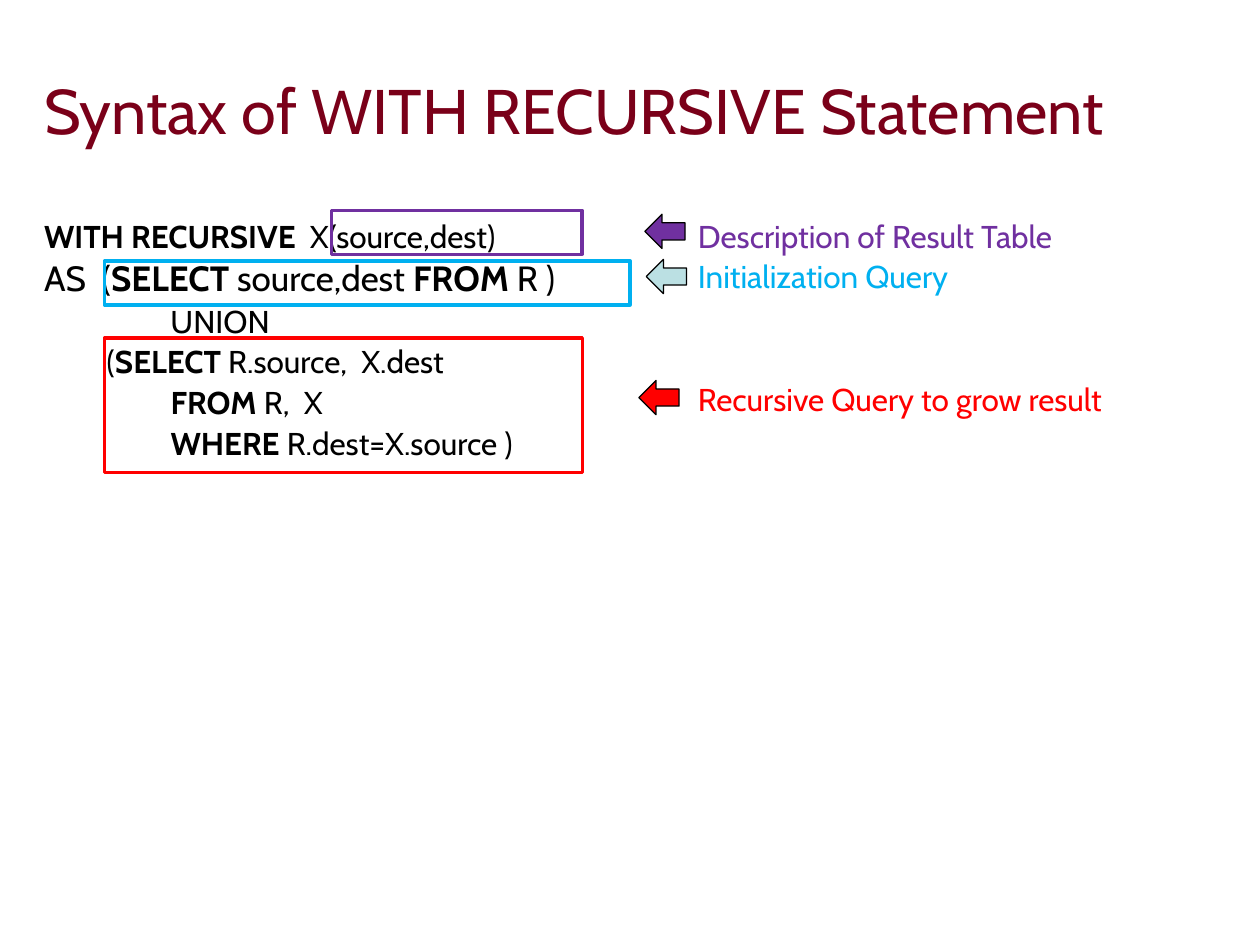
"""Build a slide that explains the parts of a WITH RECURSIVE statement."""
from dataclasses import dataclass

import pptx
import pptx.dml.color
import pptx.enum.shapes
import pptx.enum.text
import pptx.util

Cm = pptx.util.Cm
Pt = pptx.util.Pt
RGBColor = pptx.dml.color.RGBColor
MSO_SHAPE = pptx.enum.shapes.MSO_SHAPE
MSO_ANCHOR = pptx.enum.text.MSO_ANCHOR

FONT = "Cabin"
MAROON = RGBColor(0x7A, 0x00, 0x19)
BLACK = RGBColor(0x00, 0x00, 0x00)
PURPLE = RGBColor(0x70, 0x30, 0xA0)
BLUE = RGBColor(0x00, 0xB0, 0xF0)
PALE_BLUE = RGBColor(0xBB, 0xE0, 0xE3)
RED = RGBColor(0xFF, 0x00, 0x00)


@dataclass(frozen=True)
class Box:
    left: float
    top: float
    width: float
    height: float


@dataclass(frozen=True)
class Run:
    text: str
    bold: bool = False


@dataclass(frozen=True)
class Line:
    runs: tuple[Run, ...]
    size: float = 18
    color: RGBColor = BLACK
    indent: float = 0
    before: float = 6
    spacing: float = 0.8


@dataclass(frozen=True)
class Part:
    frame: Box
    color: RGBColor
    arrow_left: float
    arrow_top: float
    arrow_fill: RGBColor


INDENT = 1.12
ARROW_WIDTH, ARROW_HEIGHT = 0.81, 0.69

TITLE = [Line((Run("Syntax of WITH RECURSIVE Statement"),), 36, MAROON, before=0, spacing=1)]
CODE = [
    Line((Run("WITH RECURSIVE", True), Run("  X(source,dest)")), before=0),
    Line((Run("AS  ("), Run("SELECT ", True), Run("source,dest "), Run("FROM", True),
          Run(" R )")), size=20),
    Line((Run("          UNION"),), indent=INDENT),
    Line((Run(" ("), Run("SELECT ", True), Run("R.source,  X.dest")), indent=INDENT),
    Line((Run("          "), Run("FROM", True), Run(" R,  X")), indent=INDENT),
    Line((Run("          "), Run("WHERE ", True), Run("R.dest=X.source )")), indent=INDENT),
]
NOTES = [
    Line((Run("Description of Result Table"),), color=PURPLE, indent=INDENT, before=0),
    Line((Run("Initialization Query"),), color=BLUE, indent=INDENT),
    Line((Run("Recursive Query to grow result"),), color=RED, indent=INDENT, before=53),
]
PARTS = [
    Part(Box(2.11, 6.81, 9.63, 2.72), RED, 12.88, 7.67, RED),
    Part(Box(2.11, 5.26, 10.59, 0.89), BLUE, 13.03, 5.23, PALE_BLUE),
    Part(Box(6.68, 4.24, 5.05, 0.89), PURPLE, 13, 4.32, PURPLE),
]


def lengths(box: Box) -> tuple[int, ...]:
    return Cm(box.left), Cm(box.top), Cm(box.width), Cm(box.height)


def add_text(s, box: Box, lines: list[Line], anchor=MSO_ANCHOR.TOP) -> None:
    tf = s.shapes.add_textbox(*lengths(box)).text_frame
    tf.word_wrap = True
    tf.vertical_anchor = anchor
    for i, line in enumerate(lines):
        p = tf.add_paragraph() if i else tf.paragraphs[0]
        p.line_spacing = line.spacing
        p.space_before = Pt(line.before)
        p._p.get_or_add_pPr().set("marL", str(Cm(line.indent)))
        for run in line.runs:
            r = p.add_run()
            r.text = run.text
            r.font.name = FONT
            r.font.size = Pt(line.size)
            r.font.bold = run.bold
            r.font.color.rgb = line.color


def add_outlined(s, kind, box: Box, color: RGBColor, weight: float,
                 fill: RGBColor | None = None) -> None:
    sp = s.shapes.add_shape(kind, *lengths(box))
    sp.shadow.inherit = False
    sp.line.color.rgb = color
    sp.line.width = Pt(weight)
    if fill is None:
        sp.fill.background()
    else:
        sp.fill.solid()
        sp.fill.fore_color.rgb = fill


def add_part(s, part: Part) -> None:
    add_outlined(s, MSO_SHAPE.RECTANGLE, part.frame, part.color, 2)
    arrow = Box(part.arrow_left, part.arrow_top, ARROW_WIDTH, ARROW_HEIGHT)
    add_outlined(s, MSO_SHAPE.LEFT_ARROW, arrow, BLACK, 0.75, part.arrow_fill)


def main() -> None:
    prs = pptx.Presentation()
    prs.slide_width, prs.slide_height = Cm(25.4), Cm(19.05)
    s = prs.slides.add_slide(prs.slide_layouts[6])
    add_text(s, Box(0.64, 0.84, 23.93, 2.74), TITLE, MSO_ANCHOR.MIDDLE)
    add_text(s, Box(0.64, 4.39, 12.57, 8.08), CODE)
    add_text(s, Box(12.7, 4.39, 12.57, 11.25), NOTES)
    for part in PARTS:
        add_part(s, part)
    prs.save("out.pptx")


if __name__ == "__main__":
    main()
